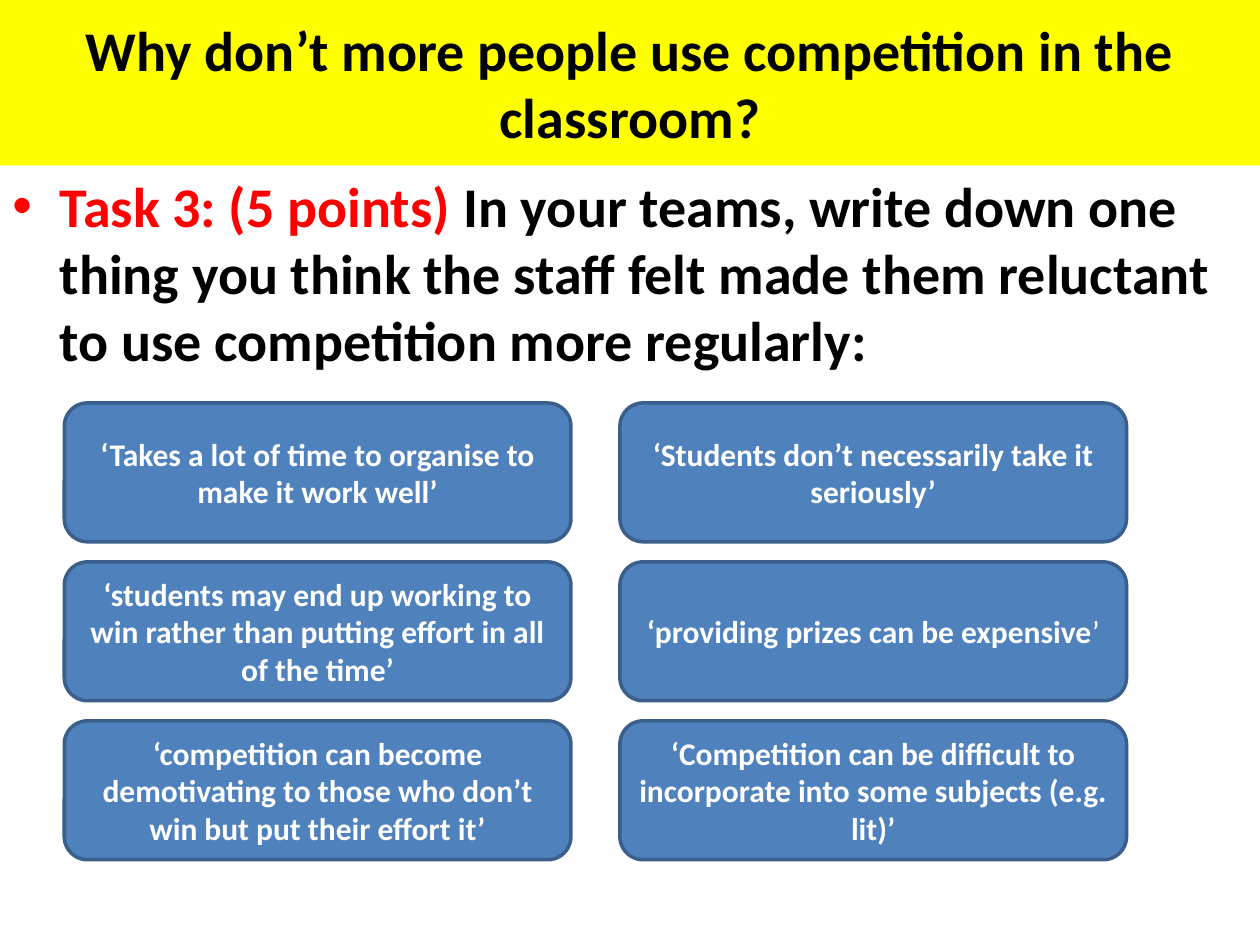
from dataclasses import dataclass

from lxml.etree import SubElement
from pptx import Presentation
from pptx.dml.color import RGBColor as Rgb
from pptx.enum.shapes import MSO_SHAPE as Shape
from pptx.enum.text import MSO_ANCHOR as Anchor, MSO_AUTO_SIZE as Auto, PP_ALIGN as Align
from pptx.oxml.ns import qn
from pptx.util import Pt


@dataclass(frozen=True)
class Theme:
    """Colours, font and type sizes of the slide."""
    face: str = "Calibri"
    ink: Rgb = Rgb(0, 0, 0)
    red: Rgb = Rgb(255, 0, 0)
    white: Rgb = Rgb(255, 255, 255)
    yellow: Rgb = Rgb(255, 255, 0)
    blue: Rgb = Rgb(0x4F, 0x81, 0xBD)
    edge: Rgb = Rgb(0x3A, 0x5F, 0x8C)
    head: int = 32
    card: int = 18


THEME = Theme()
WIDTH, HEIGHT, BAND = 720, 540, 94.5
TITLE = "Why don’t more people use competition in the classroom?"
TASK = (
    ("Task 3: (5 points) ", THEME.red),
    ("In your teams, write down one thing you think the staff felt made them "
     "reluctant to use competition more regularly:", THEME.ink),
)
CARDS = (
    "‘Takes a lot of time to organise to make it work well’",
    "‘Students don’t necessarily take it seriously’",
    "‘students may end up working to win rather than putting effort in all of the time’",
    "‘providing prizes can be expensive’",
    "‘competition can become demotivating to those who don’t win but put their effort it’",
    "‘Competition can be difficult to incorporate into some subjects (e.g. lit)’",
)
LIGHT = 3


def style(font, size, color):
    """Set bold type in the theme face."""
    font.name, font.size, font.bold = THEME.face, Pt(size), True
    font.color.rgb = color


def add_title(slide, x, y, w, h):
    """Fill the title band."""
    title = slide.shapes.title
    title.left, title.top, title.width, title.height = map(Pt, (x, y, w, h))
    title.fill.solid()
    title.fill.fore_color.rgb = THEME.yellow
    frame = title.text_frame
    frame.text, frame.word_wrap = TITLE, True
    frame.auto_size, frame.vertical_anchor = Auto.NONE, Anchor.MIDDLE
    para = frame.paragraphs[0]
    para.alignment = Align.CENTER
    style(para.font, THEME.head, THEME.ink)


def add_task(slide, x, y, w, h):
    """Write the bulleted task under the title."""
    frame = slide.shapes.add_textbox(*map(Pt, (x, y, w, h))).text_frame
    frame.word_wrap = True
    para = frame.paragraphs[0]
    for text, color in TASK:
        run = para.add_run()
        run.text = text
        style(run.font, THEME.head, color)
    props = para._p.get_or_add_pPr()
    props.set("marL", str(Pt(27)))
    props.set("indent", str(Pt(-27)))
    SubElement(props, qn("a:buFont"), typeface="Arial")
    SubElement(props, qn("a:buChar"), char="•")


def add_card(slide, text, light, x, y, w, h):
    """Draw one rounded card, with a light closing quote if asked."""
    card = slide.shapes.add_shape(Shape.ROUNDED_RECTANGLE, *map(Pt, (x, y, w, h)))
    card.shadow.inherit = False
    card.fill.solid()
    card.fill.fore_color.rgb = THEME.blue
    card.line.color.rgb, card.line.width = THEME.edge, Pt(2)
    frame = card.text_frame
    frame.word_wrap, frame.vertical_anchor = True, Anchor.MIDDLE
    para = frame.paragraphs[0]
    para.alignment = Align.CENTER
    style(para.font, THEME.card, THEME.white)
    for part in (text[:-1], text[-1]) if light else (text,):
        run = para.add_run()
        run.text = part
        style(run.font, THEME.card, THEME.white)
    if light:
        run.font.bold = False


def add_grid(slide, x, y, w, h, cols=2, gap_x=28, gap_y=11.5):
    """Lay the cards out in equal columns and rows."""
    rows = len(CARDS) // cols
    wide = (w - gap_x * (cols - 1)) / cols
    high = (h - gap_y * (rows - 1)) / rows
    for i, text in enumerate(CARDS):
        row, col = divmod(i, cols)
        add_card(slide, text, i == LIGHT, x + col * (wide + gap_x),
                 y + row * (high + gap_y), wide, high)


def main():
    """Build and save the slide."""
    deck = Presentation()
    deck.slide_width, deck.slide_height = Pt(WIDTH), Pt(HEIGHT)
    slide = deck.slides.add_slide(deck.slide_layouts[5])
    add_title(slide, 0, 0, WIDTH, BAND)
    add_task(slide, 0, BAND, WIDTH, HEIGHT - BAND)
    add_grid(slide, 36.75, 230.25, 607, 261)
    deck.save("out.pptx")


if __name__ == "__main__":
    main()
